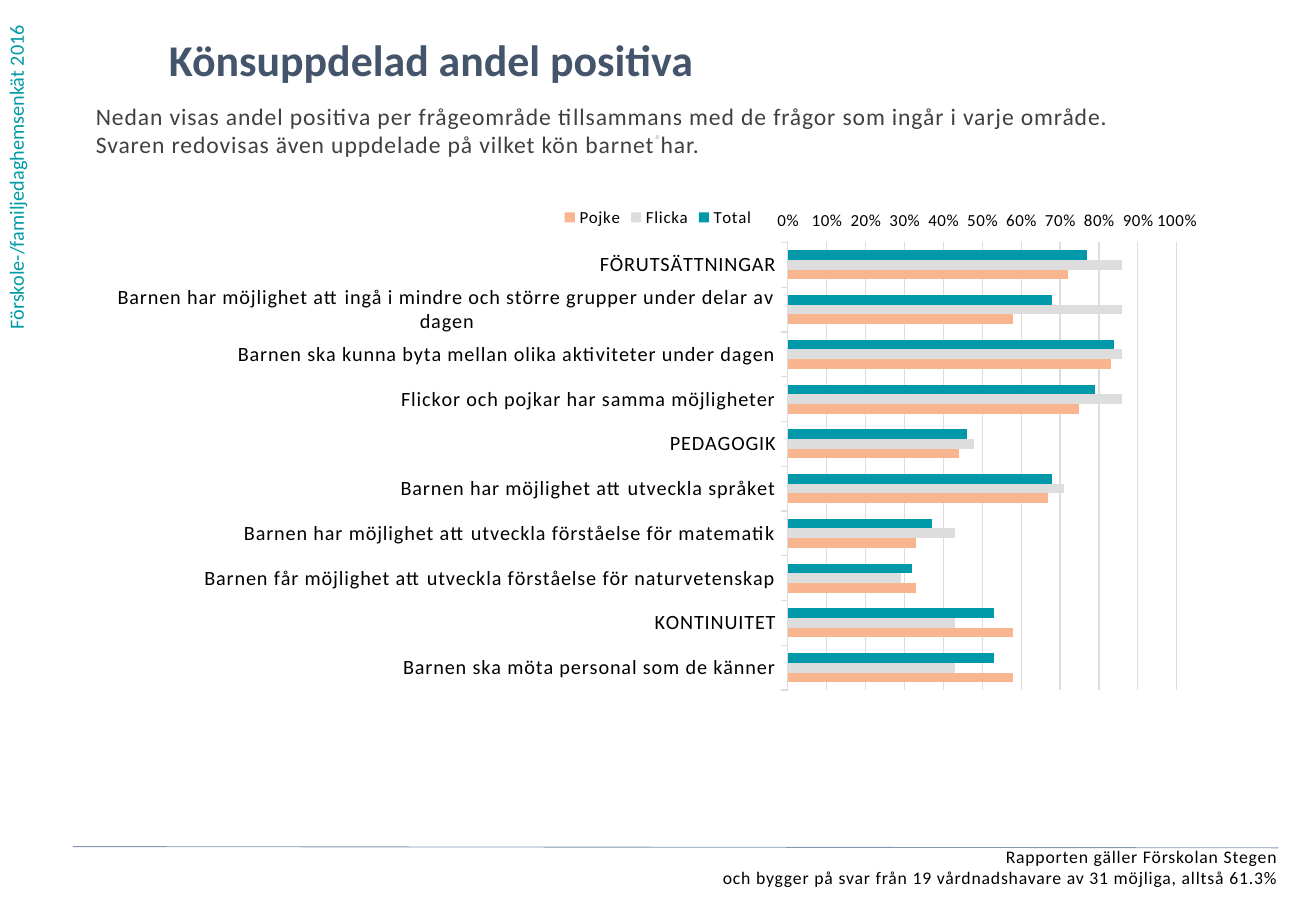
import pptx
import pptx.chart.data
import pptx.dml.color
import pptx.enum.chart
import pptx.enum.shapes
import pptx.enum.text
import pptx.oxml.ns
import pptx.oxml.xmlchemy
import pptx.util

WIDTH = pptx.util.Inches(10.83)
HEIGHT = pptx.util.Inches(7.5)
FONT = "Calibri"
SPACING = "50"
COLORS = {
    "teal": "009BA4", "title": "44546A", "body": "404040", "black": "000000",
    "dot": "D2D9E2", "rule": "8497B0", "grid": "DDDDDD",
    "Total": "0099AA", "Flicka": "DDDDDD", "Pojke": "F9B590",
}
QUESTIONS = [
    "FÖRUTSÄTTNINGAR",
    "Barnen har möjlighet att ingå i mindre och större grupper under delar av dagen",
    "Barnen ska kunna byta mellan olika aktiviteter under dagen",
    "Flickor och pojkar har samma möjligheter",
    "PEDAGOGIK",
    "Barnen har möjlighet att utveckla språket",
    "Barnen har möjlighet att utveckla förståelse för matematik",
    "Barnen får möjlighet att utveckla förståelse för naturvetenskap",
    "KONTINUITET",
    "Barnen ska möta personal som de känner",
]
SHARES = {
    "Total": [0.77, 0.68, 0.84, 0.79, 0.46, 0.68, 0.37, 0.32, 0.53, 0.53],
    "Flicka": [0.86, 0.86, 0.86, 0.86, 0.48, 0.71, 0.43, 0.29, 0.43, 0.43],
    "Pojke": [0.72, 0.58, 0.83, 0.75, 0.44, 0.67, 0.33, 0.33, 0.58, 0.58],
}
PLOT_AREA = {"x": 61.57, "y": 8.95, "w": 34.6, "h": 83.2}  # percent of the chart


def color(name):
    return pptx.dml.color.RGBColor.from_string(COLORS[name])


def area(x, y, w, h):
    """Turn percentages of the slide's size into lengths."""
    return [int(size * share / 100)
            for size, share in zip((WIDTH, HEIGHT, WIDTH, HEIGHT), (x, y, w, h))]


def set_font(font, size, name, bold=False):
    font.name = FONT
    font.size = pptx.util.Pt(size)
    font.bold = bold
    font.color.rgb = color(name)


def space_letters(element):
    for props in element.iter(pptx.oxml.ns.qn("a:defRPr")):
        props.set("spc", SPACING)


def fill_text(sp, text, size, name, bold=False, align="LEFT", spaced=True, inset=0):
    tf = sp.text_frame
    tf.word_wrap = True
    tf.auto_size = pptx.enum.text.MSO_AUTO_SIZE.NONE
    tf.vertical_anchor = pptx.enum.text.MSO_ANCHOR.TOP
    tf.margin_left = tf.margin_right = pptx.util.Inches(inset)
    tf.margin_top = tf.margin_bottom = pptx.util.Inches(inset / 2)
    tf.text = text
    for p in tf.paragraphs:
        p.alignment = getattr(pptx.enum.text.PP_ALIGN, align)
        set_font(p.font, size, name, bold)
        if spaced:
            space_letters(p._p)


def add_title(s, box, text):
    sp = s.shapes.title
    sp.left, sp.top, sp.width, sp.height = area(*box)
    fill_text(sp, text, 26, "title", bold=True, spaced=False)


def add_text(s, box, *args, **kwargs):
    sp = s.shapes.add_textbox(*area(*box))
    fill_text(sp, *args, **kwargs)
    return sp


def add_side_label(s, box, text):
    sp = add_text(s, box, text, 12, "teal", spaced=False, inset=0.1)
    sp.text_frame._txBody.bodyPr.set("vert", "vert270")


def add_rule(s, x1, y1, x2, y2):
    line = s.shapes.add_connector(
        pptx.enum.shapes.MSO_CONNECTOR.STRAIGHT, *area(x1, y1, x2, y2))
    line.line.color.rgb = color("rule")
    line.line.width = pptx.util.Pt(0.5)
    line._element.spPr.append(pptx.oxml.xmlchemy.OxmlElement("a:effectLst"))


def fix_plot_area(chart):
    """Pin the inner plot area, leaving the left part to the questions."""
    plot_area = chart._chartSpace.chart.plotArea
    for old in plot_area.findall(pptx.oxml.ns.qn("c:layout")):
        plot_area.remove(old)
    layout = pptx.oxml.xmlchemy.OxmlElement("c:layout")
    manual = pptx.oxml.xmlchemy.OxmlElement("c:manualLayout")
    settings = {"layoutTarget": "inner", "xMode": "edge", "yMode": "edge"}
    settings.update({key: str(share / 100) for key, share in PLOT_AREA.items()})
    for tag, value in settings.items():
        item = pptx.oxml.xmlchemy.OxmlElement("c:" + tag)
        item.set("val", value)
        manual.append(item)
    layout.append(manual)
    plot_area.insert(0, layout)


def style_axes(chart):
    questions, percent = chart.category_axis, chart.value_axis
    questions.reverse_order = True
    questions.crosses = pptx.enum.chart.XL_AXIS_CROSSES.MAXIMUM
    percent.minimum_scale, percent.maximum_scale = 0, 1
    percent.major_unit = 0.1
    percent.has_major_gridlines = True
    percent.format.line.fill.background()
    labels = percent.tick_labels
    labels.number_format, labels.number_format_is_linked = "0%;0%", False
    for line in (questions.format.line, percent.major_gridlines.format.line):
        line.color.rgb = color("grid")
        line.width = pptx.util.Pt(0.75)
    for axis, size in ((questions, 12), (percent, 10)):
        axis.major_tick_mark = pptx.enum.chart.XL_TICK_MARK.OUTSIDE
        set_font(axis.tick_labels.font, size, "black")


def add_bar_chart(s, box):
    data = pptx.chart.data.CategoryChartData(number_format="0%")
    data.categories = QUESTIONS
    for name, values in SHARES.items():
        data.add_series(name, values)
    chart = s.shapes.add_chart(
        pptx.enum.chart.XL_CHART_TYPE.BAR_CLUSTERED, *area(*box), data).chart
    chart.has_title = False
    set_font(chart.font, 10, "black")
    chart.has_legend = True
    chart.legend.position = pptx.enum.chart.XL_LEGEND_POSITION.TOP
    chart.legend.include_in_layout = False
    set_font(chart.legend.font, 10, "black")
    plot = chart.plots[0]
    plot.gap_width, plot.overlap = 162, 0
    plot.vary_by_categories = False
    for series in plot.series:
        series.format.fill.solid()
        series.format.fill.fore_color.rgb = color(series.name)
    style_axes(chart)
    fix_plot_area(chart)
    space_letters(chart._chartSpace)


def main():
    prs = pptx.Presentation()
    prs.slide_width, prs.slide_height = WIDTH, HEIGHT
    s = prs.slides.add_slide(prs.slide_layouts.get_by_name("Title Only"))
    add_side_label(s, (-0.18, 0, 3.69, 37.47), "Förskole-/familjedaghemsenkät 2016")
    add_title(s, (12.83, 3.6, 77.01, 7.6), "Könsuppdelad andel positiva")
    add_text(s, (7.29, 11.2, 87.35, 13.47),
             "Nedan visas andel positiva per frågeområde tillsammans med de frågor "
             "som ingår i varje område.\v"
             "Svaren redovisas även uppdelade på vilket kön barnet har.", 14, "body")
    add_text(s, (1.11, 92.8, 96.03, 5.73),
             "Rapporten gäller Förskolan Stegen\v"
             "och bygger på svar från 19 vårdnadshavare av 31 möjliga, alltså 61.3%",
             10.5, "black", align="RIGHT")
    add_text(s, (35.73, 13.6, 28.44, 5.2), "⋅", 12, "dot", bold=True, align="CENTER")
    add_bar_chart(s, (7.29, 21.33, 85.41, 59.07))
    add_rule(s, 5.54, 92.93, 97.14, 93.07)
    prs.save("out.pptx")


if __name__ == "__main__":
    main()
